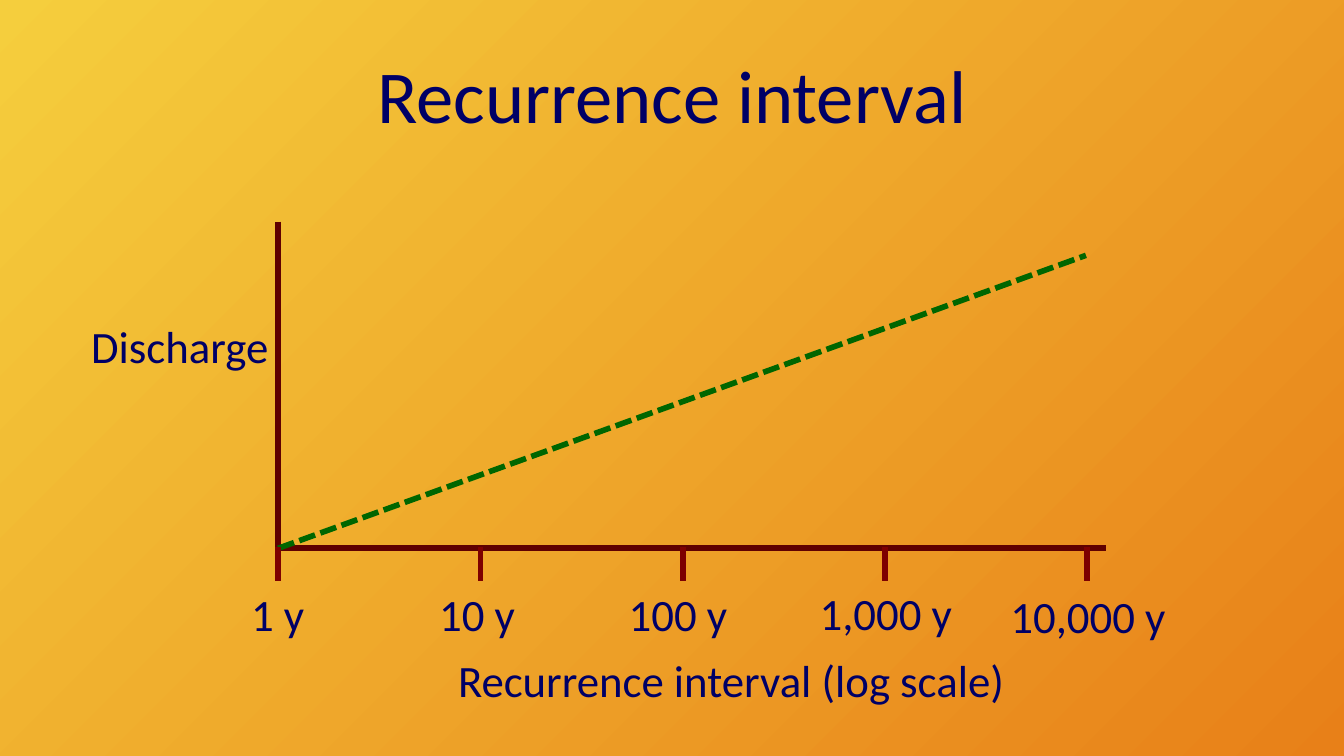
from dataclasses import dataclass

from lxml import etree
from pptx import Presentation
from pptx.dml.color import RGBColor
from pptx.enum.dml import MSO_LINE
from pptx.enum.shapes import MSO_CONNECTOR
from pptx.enum.text import MSO_ANCHOR, MSO_AUTO_SIZE, PP_ALIGN
from pptx.oxml.ns import qn
from pptx.util import Inches, Pt

STRAIGHT = MSO_CONNECTOR.STRAIGHT
SHORT_DASH = MSO_LINE.SQUARE_DOT
MIDDLE = MSO_ANCHOR.MIDDLE
CENTER = PP_ALIGN.CENTER
FIT_SHAPE = MSO_AUTO_SIZE.SHAPE_TO_FIT_TEXT
TITLE_ONLY = 5


@dataclass(frozen=True)
class Theme:
    font: str = "Calibri"
    title_size: int = 40
    label_size: int = 24
    line_width: int = 3
    text: str = "000066"
    axis: str = "5F0000"
    tick: str = "7D0000"
    trend: str = "006600"
    gradient: tuple = ("F5CE3D", "E88018")


THEME = Theme()
SLIDE_WIDTH = 10
SLIDE_HEIGHT = SLIDE_WIDTH * 9 / 16
ORIGIN_X, ORIGIN_Y = 2.07, 4.08
AXIS_TOP, AXIS_RIGHT = 1.65, 8.23
TREND_END = (8.08, 1.9)
LAST_TICK_X, TICK_TOP, TICK_LENGTH = 8.09, 4.07, 0.25
LABEL_HEIGHT = 0.5
TICK_LABELS = (
    ("1 y", 1.77, 4.32, 0.6),
    ("10 y", 3.17, 4.32, 0.77),
    ("100 y", 4.58, 4.32, 0.94),
    ("1,000 y", 6, 4.31, 1.19),
    ("10,000 y", 7.42, 4.33, 1.36),
)
AXIS_LABELS = (
    ("Discharge", 0.58, 2.32, 1.53),
    ("Recurrence interval (log scale)", 3.31, 4.81, 4.27),
)


def paint_background(page):
    fill = page.background.fill
    fill.gradient()
    fill.gradient_angle = 315
    for stop, position, color in zip(fill.gradient_stops, (0, 1), THEME.gradient):
        stop.position = position
        stop.color.rgb = RGBColor.from_string(color)


def format_text(frame, size):
    for para in frame.paragraphs:
        for span in para.runs:
            span.font.name = THEME.font
            span.font.size = Pt(size)
            span.font.color.rgb = RGBColor.from_string(THEME.text)


def style_line(line, color):
    line.color.rgb = RGBColor.from_string(color)
    line.width = Pt(THEME.line_width)


def set_title(page, text):
    title = page.shapes.title
    title.left, title.top = Inches(0.5), Inches(0.23)
    title.width, title.height = Inches(SLIDE_WIDTH - 1), Inches(0.94)
    frame = title.text_frame
    frame.text = text
    frame.vertical_anchor = MIDDLE
    frame.paragraphs[0].alignment = CENTER
    format_text(frame, THEME.title_size)


def add_label(page, text, left, top, width):
    box = page.shapes.add_textbox(
        Inches(left), Inches(top), Inches(width), Inches(LABEL_HEIGHT)
    )
    frame = box.text_frame
    frame.word_wrap = False
    frame.auto_size = FIT_SHAPE
    frame.text = text
    format_text(frame, THEME.label_size)


def add_line(page, start, end, color):
    connector = page.shapes.add_connector(
        STRAIGHT, *(Inches(length) for length in (*start, *end))
    )
    style_line(connector.line, color)
    etree.SubElement(connector._element.spPr, qn("a:effectLst"))
    return connector


def add_axes(page):
    builder = page.shapes.build_freeform(Inches(ORIGIN_X), Inches(AXIS_TOP))
    corners = ((ORIGIN_X, ORIGIN_Y), (AXIS_RIGHT, ORIGIN_Y))
    builder.add_line_segments(
        [(Inches(x), Inches(y)) for x, y in corners], close=False
    )
    axes = builder.convert_to_shape()
    axes.shadow.inherit = False
    axes.fill.background()
    style_line(axes.line, THEME.axis)


def add_ticks(page):
    step = (LAST_TICK_X - ORIGIN_X) / (len(TICK_LABELS) - 1)
    for index in range(len(TICK_LABELS)):
        x = ORIGIN_X + index * step
        add_line(page, (x, TICK_TOP), (x, TICK_TOP + TICK_LENGTH), THEME.tick)


def main():
    deck = Presentation()
    deck.slide_width, deck.slide_height = Inches(SLIDE_WIDTH), Inches(SLIDE_HEIGHT)
    page = deck.slides.add_slide(deck.slide_layouts[TITLE_ONLY])
    paint_background(page)
    set_title(page, "Recurrence interval")
    add_axes(page)
    for label in AXIS_LABELS:
        add_label(page, *label)
    trend = add_line(page, (ORIGIN_X, ORIGIN_Y), TREND_END, THEME.trend)
    trend.line.dash_style = SHORT_DASH
    add_ticks(page)
    for label in TICK_LABELS:
        add_label(page, *label)
    deck.save("out.pptx")


if __name__ == "__main__":
    main()
